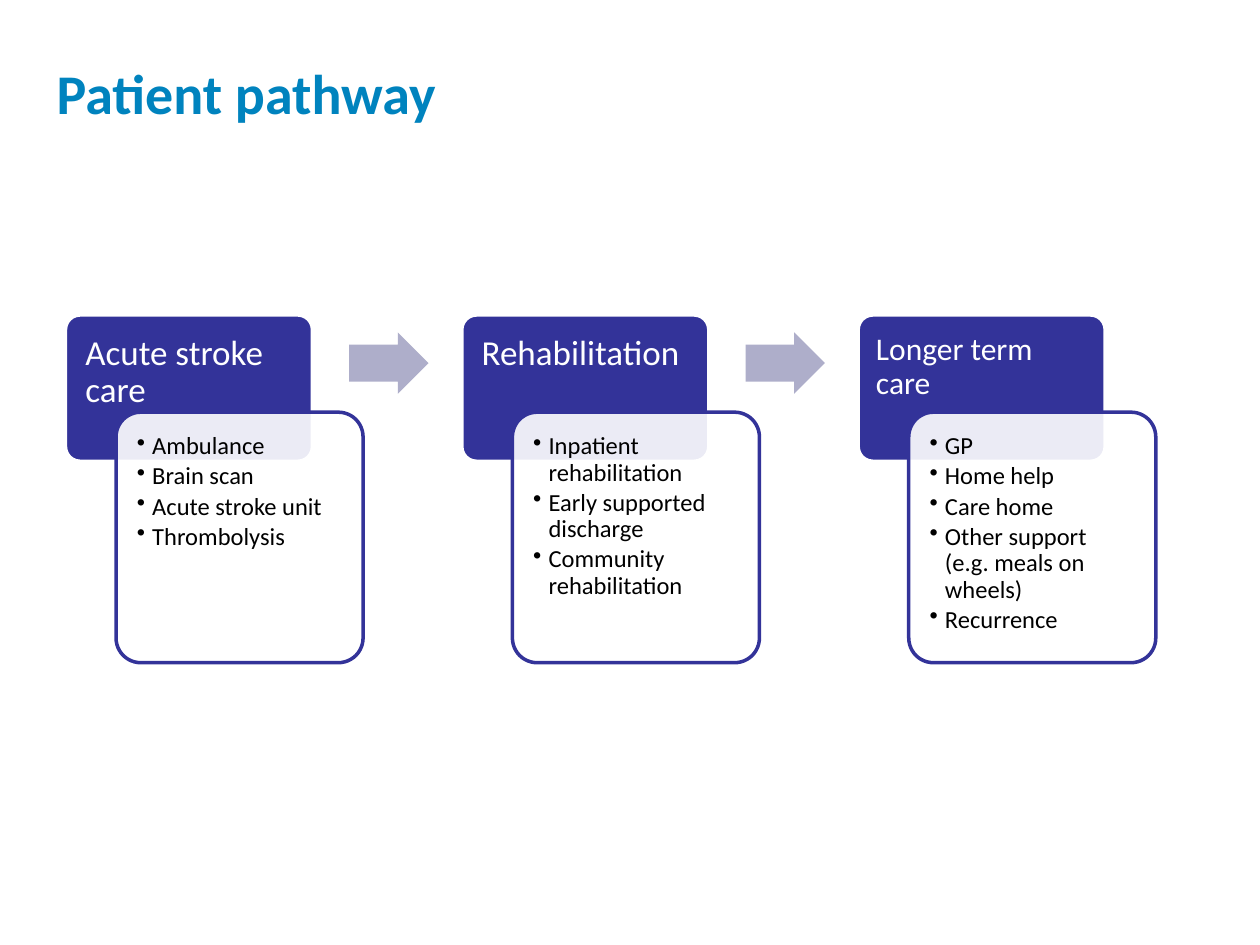
from lxml.etree import SubElement
from pptx import Presentation
from pptx.dml.color import RGBColor
from pptx.enum.shapes import MSO_SHAPE
from pptx.enum.text import MSO_ANCHOR, PP_ALIGN
from pptx.oxml.ns import qn
from pptx.util import Cm, Pt

TITLE = "Patient pathway"
STAGES = [
    ("Acute stroke care", 20, 0.4,
     ["Ambulance", "Brain scan", "Acute stroke unit", "Thrombolysis"]),
    ("Rehabilitation", 20, 0.4,
     ["Inpatient rehabilitation", "Early supported discharge",
      "Community rehabilitation"]),
    ("Longer term care", 18, 0.36,
     ["GP", "Home help", "Care home", "Other support (e.g. meals on wheels)",
      "Recurrence"]),
]
BLUE, NAVY, LILAC, WHITE, BLACK = "0083BE", "333399", "AEAECA", "FFFFFF", "000000"
LEFT, STEP = 1.32, 7.99
HEAD = (0, 6.35, 4.98, 2.95)
LABEL = (0, 6.35, 4.98, 1.96)
PANEL = (1.02, 8.31, 4.98, 5.05)
BODY = (1.16, 8.46, 4.67, 4.75)
ARROW = (5.72, 6.7, 1.6, 1.24)


def tint(color, code):
    """Set a colour from a hex string."""
    color.rgb = RGBColor.from_string(code)


def put(obj, style):
    """Set each attribute named in a dict."""
    for name, value in style.items():
        setattr(obj, name, value)


def place(box, col):
    """Return the box in a column as lengths."""
    x, *rest = box
    return [Cm(n) for n in (LEFT + col * STEP + x, *rest)]


def draw(slide, kind, box, col, fill, line=None, adj=(0.1,)):
    """Add a filled preset shape to a column."""
    shape = slide.shapes.add_shape(kind, *place(box, col))
    shape.shadow.inherit = False
    for i, value in enumerate(adj):
        shape.adjustments[i] = value
    shape.fill.solid()
    tint(shape.fill.fore_color, fill)
    if line:
        tint(shape.line.color, line)
        shape.line.width = Pt(2)
    else:
        shape.line.fill.background()
    return shape


def write(frame, lines, size, color, inset, space=0.9, bold=False, dot=False):
    """Fill a text frame with formatted paragraphs."""
    side, base = Cm(inset[0]), Cm(inset[1])
    put(frame, {"word_wrap": True, "vertical_anchor": MSO_ANCHOR.TOP,
                "margin_left": side, "margin_right": side,
                "margin_top": Cm(inset[2]), "margin_bottom": base})
    frame.text = "\n".join(lines)
    for para in frame.paragraphs:
        put(para, {"alignment": PP_ALIGN.LEFT, "line_spacing": space,
                   "space_before": Pt(0), "space_after": Pt(2.1 if dot else 0)})
        if dot:
            props = para._p.get_or_add_pPr()
            props.set("marL", str(Cm(0.31)))
            props.set("indent", str(-Cm(0.31)))
            SubElement(props, qn("a:buChar"), char="•")
        put(para.font, {"name": "Calibri", "size": Pt(size), "bold": bold})
        tint(para.font.color, color)


def stage(slide, col, name, size, pad, items):
    """Draw one stage with its heading and list."""
    draw(slide, MSO_SHAPE.ROUNDED_RECTANGLE, HEAD, col, NAVY, WHITE)
    label = slide.shapes.add_textbox(*place(LABEL, col))
    write(label.text_frame, [name], size, WHITE, (pad, pad / 2, pad))
    panel = draw(slide, MSO_SHAPE.ROUNDED_RECTANGLE, PANEL, col, WHITE, NAVY)
    fill = panel._element.spPr.find(qn("a:solidFill"))
    SubElement(fill[0], qn("a:alpha"), val="90000")
    body = slide.shapes.add_textbox(*place(BODY, col))
    write(body.text_frame, items, 14, BLACK, (0.28, 0.28, 0.28), dot=True)
    if col < len(STAGES) - 1:
        draw(slide, MSO_SHAPE.RIGHT_ARROW, ARROW, col, LILAC, adj=(0.6, 0.5))


def main():
    """Build the slide and save it."""
    deck = Presentation()
    put(deck, {"slide_width": Cm(25.4), "slide_height": Cm(19.05)})
    slide = deck.slides.add_slide(deck.slide_layouts[5])
    title = slide.shapes.title
    put(title, {"left": Cm(0.89), "top": Cm(1.32),
                "width": Cm(14.4), "height": Cm(1.8)})
    write(title.text_frame, [TITLE], 32, BLUE, (0.25, 0.13, 0.13), 0.8, True)
    for col, data in enumerate(STAGES):
        stage(slide, col, *data)
    deck.save("out.pptx")


if __name__ == "__main__":
    main()
